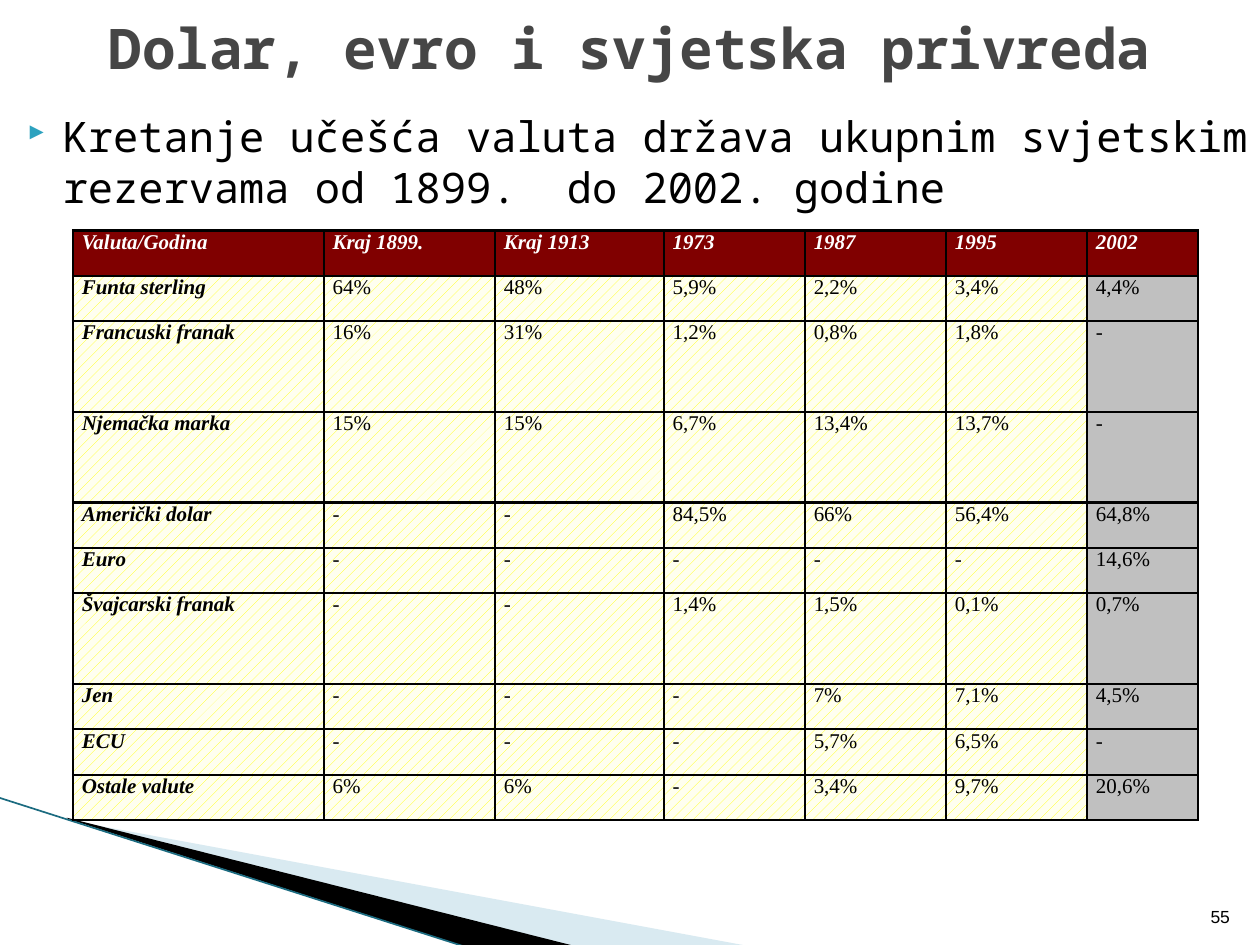
from lxml import etree
from pptx import Presentation
from pptx import util as u
from pptx.dml import color
from pptx.enum import dml, shapes, text
from pptx.oxml import ns, parse_xml

NS = ns.nsdecls("a")
AL = text.PP_ALIGN


def rgb(value):
    return color.RGBColor.from_string(value)


def write(tf, value, size=12, font="Noto Sans Mono", fill="000000", bold=False,
          italic=False, align=AL.LEFT, anchor=text.MSO_ANCHOR.TOP):
    tf.word_wrap = True
    tf.vertical_anchor = anchor
    p = tf.paragraphs[0]
    p.alignment = align
    r = p.add_run()
    r.text = value
    r.font.size = u.Pt(size)
    r.font.name = font
    r.font.color.rgb = rgb(fill)
    r.font.bold = bold
    r.font.italic = italic
    return p


class Deck:
    accent = "2DA2BF"
    header = "800000"
    latest = "C0C0C0"
    hatch = ("FFFF00", "FFFFEF")
    serif = "Times New Roman"

    def __init__(self, prs):
        self.s = prs.slides.add_slide(prs.slide_layouts[5])

    def title(self, value, *box):
        sp = self.s.shapes.title
        sp.left, sp.top, sp.width, sp.height = map(u.Inches, box)
        write(sp.text_frame, value, size=32, fill="464646", bold=True,
              align=AL.CENTER, anchor=text.MSO_ANCHOR.MIDDLE)

    def label(self, value, *box, **style):
        sp = self.s.shapes.add_textbox(*map(u.Inches, box))
        return sp.text_frame, write(sp.text_frame, value, **style)

    def bullet(self, value, *box):
        tf, p = self.label(value, *box, size=24)
        tf.margin_right = 0
        pPr = p._p.get_or_add_pPr()
        pPr.set("marL", str(u.Inches(0.4)))
        pPr.set("indent", str(u.Inches(-0.28)))
        for xml in (f'<a:buClr {NS}><a:srgbClr val="{self.accent}"/></a:buClr>',
                    f'<a:buSzPct {NS} val="68000"/>',
                    f'<a:buFont {NS} typeface="Wingdings 3" charset="2"/>',
                    f'<a:buChar {NS} char="}}"/>'):
            pPr.append(parse_xml(xml))

    def wedge(self, points, frame, fill, opacity=100):
        pts = [(u.Inches(x), u.Inches(y)) for x, y in points]
        fb = self.s.shapes.build_freeform(*pts[0])
        fb.add_line_segments(pts[1:], close=True)
        sp = fb.convert_to_shape()
        sp.shadow.inherit = False
        sp.fill.solid()
        sp.fill.fore_color.rgb = rgb(fill)
        sp.line.fill.background()
        self.reframe(sp, *map(u.Inches, frame))
        if opacity < 100:
            clr = sp._element.spPr.find(".//" + ns.qn("a:srgbClr"))
            etree.SubElement(clr, ns.qn("a:alpha"), val=str(opacity * 1000))

    def reframe(self, sp, left, top, width, height):
        dx, dy = sp.left - left, sp.top - top
        sp.left, sp.top, sp.width, sp.height = left, top, width, height
        outline = sp._element.spPr.find(".//" + ns.qn("a:path"))
        outline.set("w", str(width))
        outline.set("h", str(height))
        for pt in outline.iter(ns.qn("a:pt")):
            pt.set("x", str(int(pt.get("x")) + dx))
            pt.set("y", str(int(pt.get("y")) + dy))

    def line(self, x1, y1, x2, y2, fill, width):
        c = self.s.shapes.add_connector(shapes.MSO_CONNECTOR.STRAIGHT,
                                        *map(u.Inches, (x1, y1, x2, y2)))
        c.line.color.rgb = rgb(fill)
        c.line.width = u.Pt(width)
        etree.SubElement(c._element.spPr, ns.qn("a:effectLst"))

    def cell(self, cell, value, head, first, last):
        cell.margin_left = cell.margin_right = u.Inches(0.07)
        cell.margin_top = cell.margin_bottom = 0
        strong = head or first
        write(cell.text_frame, value, font=self.serif, bold=strong, italic=strong,
              fill="FFFFFF" if head else "000000", align=AL.JUSTIFY)
        if head or last:
            cell.fill.solid()
            cell.fill.fore_color.rgb = rgb(self.header if head else self.latest)
        else:
            cell.fill.patterned()
            cell.fill.pattern = dml.MSO_PATTERN.PERCENT_20
            cell.fill.fore_color.rgb, cell.fill.back_color.rgb = map(rgb, self.hatch)
        tcPr = cell._tc.get_or_add_tcPr()
        for i, side in enumerate("LRTB"):
            tcPr.insert(i, parse_xml(
                f'<a:ln{side} {NS} w="{u.Pt(1.5)}"><a:solidFill>'
                f'<a:srgbClr val="000000"/></a:solidFill></a:ln{side}>'))

    def table(self, rows, left, top, widths, heights):
        box = map(u.Inches, (left, top, sum(widths), sum(heights)))
        tbl = self.s.shapes.add_table(len(rows), len(widths), *box).table
        tbl.first_row = tbl.horz_banding = False
        for col, w in zip(tbl.columns, widths):
            col.width = u.Inches(w)
        for i, (row, h) in enumerate(zip(rows, heights)):
            tbl.rows[i].height = u.Inches(h)
            for j, value in enumerate(row):
                self.cell(tbl.cell(i, j), value, i == 0, j == 0, j == len(row) - 1)


RESERVES = [
    ("Valuta/Godina", "Kraj 1899.", "Kraj 1913", "1973", "1987", "1995", "2002"),
    ("Funta sterling", "64%", "48%", "5,9%", "2,2%", "3,4%", "4,4%"),
    ("Francuski franak", "16%", "31%", "1,2%", "0,8%", "1,8%", "-"),
    ("Njemačka marka", "15%", "15%", "6,7%", "13,4%", "13,7%", "-"),
    ("Američki dolar", "-", "-", "84,5%", "66%", "56,4%", "64,8%"),
    ("Euro", "-", "-", "-", "-", "-", "14,6%"),
    ("Švajcarski franak", "-", "-", "1,4%", "1,5%", "0,1%", "0,7%"),
    ("Jen", "-", "-", "-", "7%", "7,1%", "4,5%"),
    ("ECU", "-", "-", "-", "5,7%", "6,5%", "-"),
    ("Ostale valute", "6%", "6%", "-", "3,4%", "9,7%", "20,6%"),
]
TALL_ROWS = (2, 3, 6)


def main():
    prs = Presentation()
    prs.slide_width, prs.slide_height = u.Inches(10), u.Inches(7.5)
    deck = Deck(prs)
    deck.wedge([(0.55, 6.51), (5.95, 7.51), (4.56, 7.51), (0.55, 6.5)],
               (0.78, 5.47, 4.16, 1.58), "A0CBDC", opacity=40)
    deck.wedge([(0.53, 6.49), (4.57, 7.51), (3.72, 7.52), (0.54, 6.5)],
               (-0.06, 6.33, 4.16, 0.92), "000000")
    deck.line(-0.01, 6.33, 3.71, 7.52, "1B6B80", 0.95)
    deck.bullet("Kretanje učešća valuta država ukupnim svjetskim rezervama "
                "od 1899.  do 2002. godine", 0, 0.83, 10, 6.67)
    deck.title("Dolar, evro i svjetska privreda", 0, 0, 10, 0.75)
    deck.label("55", 9.46, 7.01, 0.4, 0.4, size=10, font="Arial",
               align=AL.RIGHT, anchor=text.MSO_ANCHOR.BOTTOM)
    heights = [0.72 if i in TALL_ROWS else 0.36 for i in range(len(RESERVES))]
    deck.table(RESERVES, 0.58, 1.83, [1.99, 1.36, 1.34, 1.12, 1.12, 1.12, 0.88], heights)
    prs.save("out.pptx")


if __name__ == "__main__":
    main()
